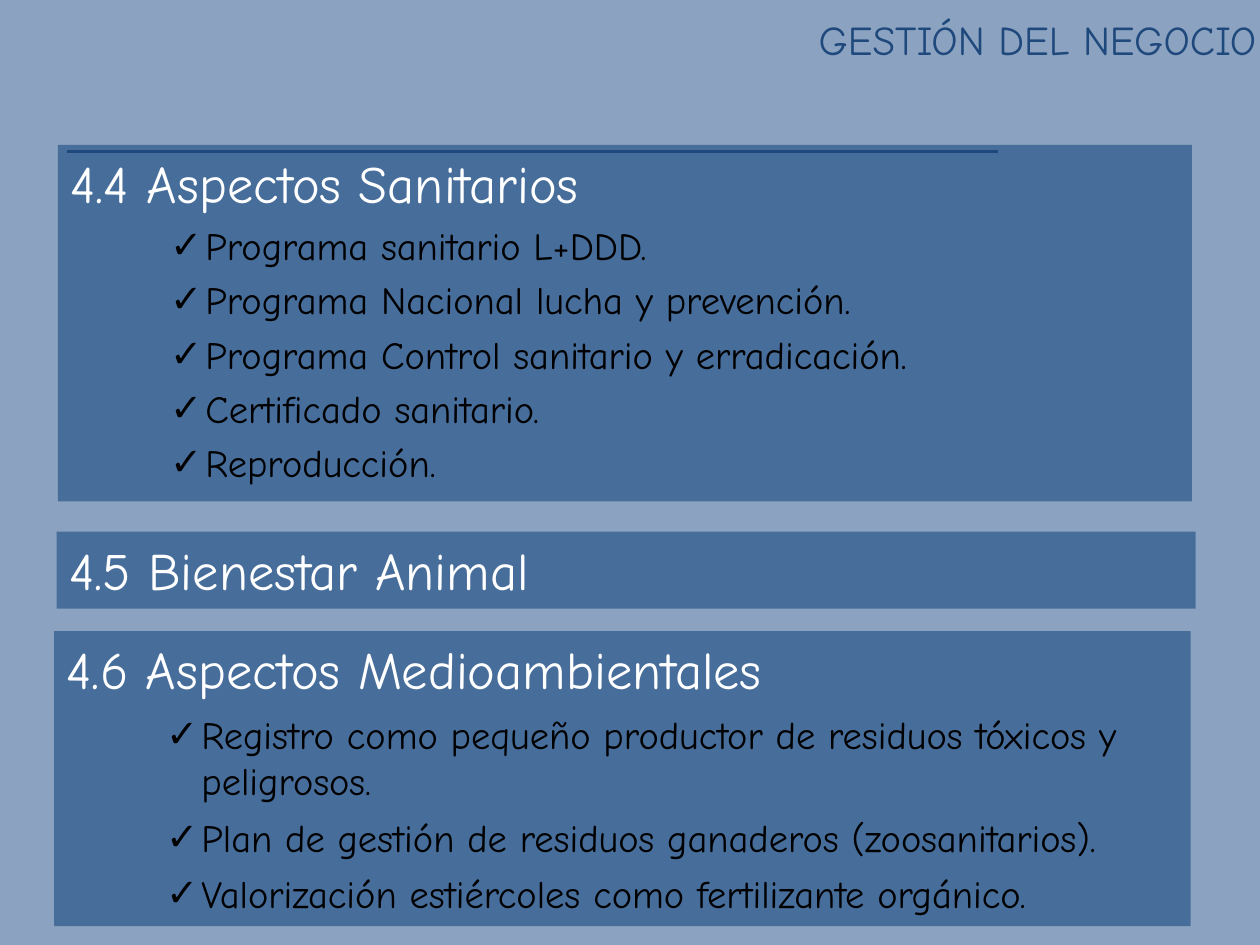
from lxml.etree import SubElement
from pptx import Presentation
from pptx.dml.color import RGBColor
from pptx.enum.shapes import MSO_CONNECTOR, MSO_SHAPE
from pptx.enum.text import MSO_ANCHOR, MSO_AUTO_SIZE, PP_ALIGN
from pptx.oxml.ns import qn
from pptx.util import Inches, Pt

FONT = "Comic Neue"
PAGE_BLUE = RGBColor(0x8B, 0xA3, 0xC0)
PANEL_BLUE = RGBColor(0x37, 0x60, 0x92)
TITLE_BLUE = RGBColor(0x1F, 0x49, 0x7D)
WHITE = RGBColor(0xFF, 0xFF, 0xFF)
BLACK = RGBColor(0x00, 0x00, 0x00)

# Content: heading, bullets, (left, top, width, height), space before bullets
TITLE = "GESTIÓN DEL NEGOCIO"
PANELS = [
    ("4.4 Aspectos Sanitarios",
     ["Programa sanitario L+DDD.",
      "Programa Nacional lucha y prevención.",
      "Programa Control sanitario y erradicación.",
      "Certificado sanitario.",
      "Reproducción."],
     (0.46, 1.15, 9, 2.83), 4.6),
    ("4.5 Bienestar Animal", [], (0.45, 4.22, 9.04, 0.61), 0),
    ("4.6 Aspectos Medioambientales",
     ["Registro como pequeño productor de residuos tóxicos y peligrosos.",
      "Plan de gestión de residuos ganaderos (zoosanitarios).",
      "Valorización estiércoles como fertilizante orgánico."],
     (0.43, 5.01, 9.02, 2.34), 6),
]


def place(shape, left, top, width, height):
    shape.left, shape.top = Inches(left), Inches(top)
    shape.width, shape.height = Inches(width), Inches(height)


def style(para, size, color, before=0):
    para.space_before = Pt(before)
    para.font.name = FONT
    para.font.size = Pt(size)
    para.font.color.rgb = color


def set_bullet(para, mark=None):
    props = para._p.get_or_add_pPr()
    props.set("marL", str(Inches(1.07) if mark else 0))
    props.set("indent", str(Inches(-0.28) if mark else 0))
    if mark:
        SubElement(props, qn("a:buFont"), typeface="Arial")
        SubElement(props, qn("a:buChar"), char=mark)
    else:
        SubElement(props, qn("a:buNone"))


def fill_panel(shape, heading, bullets, before):
    shape.fill.solid()
    shape.fill.fore_color.rgb = PANEL_BLUE
    color = shape.fill._xPr.find(qn("a:solidFill"))[0]
    SubElement(color, qn("a:alpha"), val="80000")
    shape.line.fill.background()
    frame = shape.text_frame
    frame.word_wrap = True
    frame.auto_size = MSO_AUTO_SIZE.NONE
    frame.vertical_anchor = MSO_ANCHOR.TOP
    for index, text in enumerate([heading, *bullets]):
        para = frame.add_paragraph() if index else frame.paragraphs[0]
        para.text = text
        para.alignment = PP_ALIGN.LEFT
        if index:
            para.level = 2
            set_bullet(para, "✓")
            style(para, 22, BLACK, before)
        else:
            set_bullet(para)
            style(para, 30, WHITE)


deck = Presentation()
deck.slide_width, deck.slide_height = Inches(10), Inches(7.5)
page = deck.slides.add_slide(deck.slide_layouts[1])
page.background.fill.solid()
page.background.fill.fore_color.rgb = PAGE_BLUE

# Title
title = page.shapes.title
place(title, 0.43, 0.05, 9.54, 0.52)
frame = title.text_frame
frame.auto_size = MSO_AUTO_SIZE.NONE
frame.vertical_anchor = MSO_ANCHOR.MIDDLE
frame.margin_left = frame.margin_right = frame.margin_top = frame.margin_bottom = 0
frame.text = TITLE
frame.paragraphs[0].alignment = PP_ALIGN.RIGHT
style(frame.paragraphs[0], 23.4, TITLE_BLUE)

# Panels: the first is the body placeholder
for number, (heading, bullets, area, before) in enumerate(PANELS):
    if number:
        panel = page.shapes.add_shape(MSO_SHAPE.RECTANGLE, 0, 0, 0, 0)
        panel.shadow.inherit = False
    else:
        panel = page.placeholders[1]
    place(panel, *area)
    fill_panel(panel, heading, bullets, before)

# Rule along the top of the first panel
rule = page.shapes.add_connector(MSO_CONNECTOR.STRAIGHT, Inches(0.53), Inches(1.2),
                                 Inches(7.92), Inches(1.2))
rule.line.color.rgb = TITLE_BLUE
rule.line.width = Pt(1.5)
SubElement(rule._element.spPr, qn("a:effectLst"))

deck.save("out.pptx")
